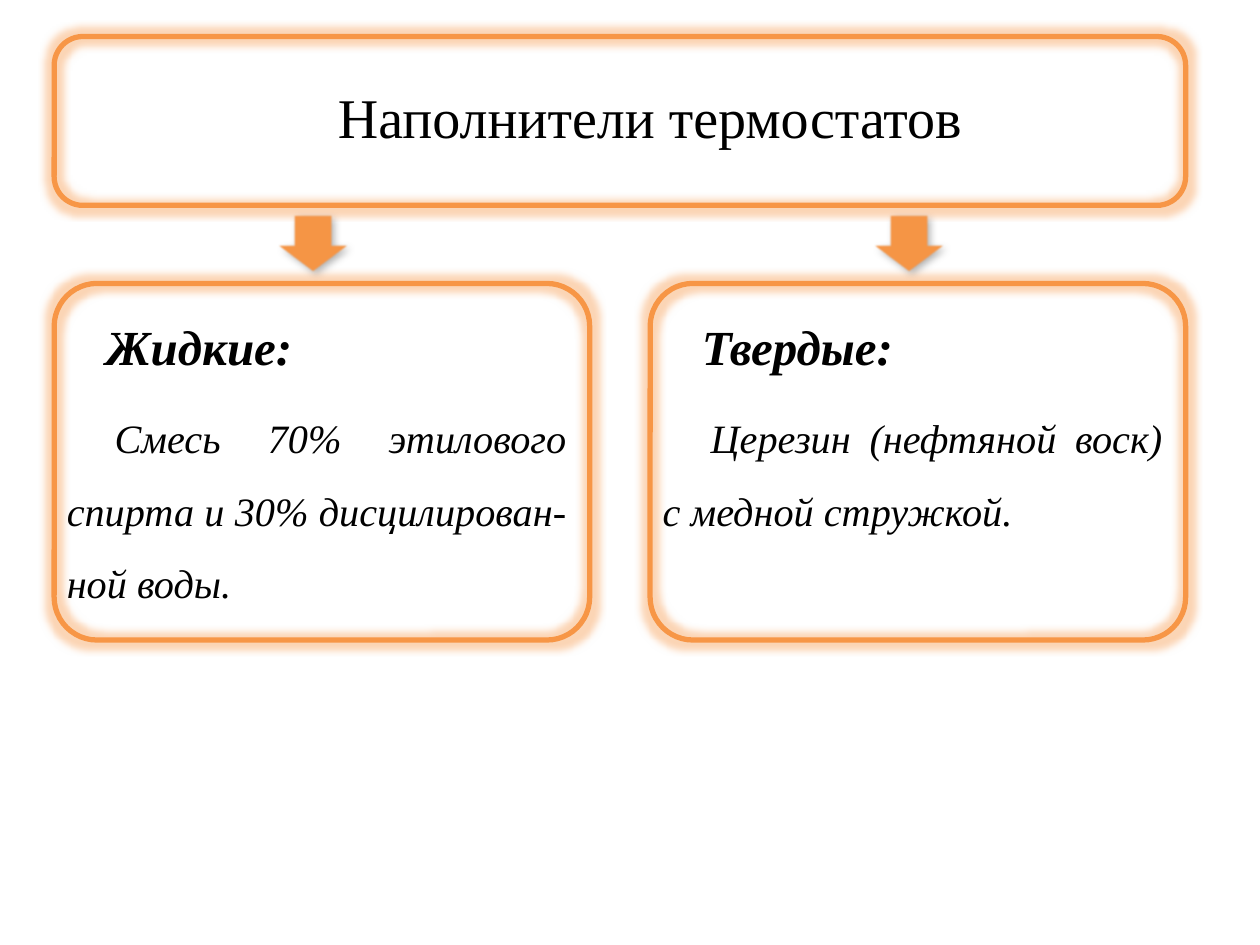
from lxml import etree
from pptx import Presentation
from pptx.dml.color import RGBColor
from pptx.enum.shapes import MSO_SHAPE
from pptx.enum.text import MSO_ANCHOR, MSO_AUTO_SIZE, PP_ALIGN
from pptx.oxml.ns import qn
from pptx.util import Inches, Pt

ROUND, ARROW = MSO_SHAPE.ROUNDED_RECTANGLE, MSO_SHAPE.DOWN_ARROW
MIDDLE, BOTTOM, TOP = MSO_ANCHOR.MIDDLE, MSO_ANCHOR.BOTTOM, MSO_ANCHOR.TOP
CENTER, LEFT, JUSTIFY = PP_ALIGN.CENTER, PP_ALIGN.LEFT, PP_ALIGN.JUSTIFY
FONT, BLACK, ORANGE = "Times New Roman", "000000", "F79646"

TITLE = "Наполнители термостатов"
FILLERS = [
    ("Жидкие:", "Смесь 70% этилового спирта и 30% дисцилирован-ной воды."),
    ("Твердые:", "Церезин (нефтяной воск) с медной стружкой."),
]
MARGIN, COLUMN_STEP, BOX_WIDTH = 0.43, 4.73, 4.25


def rgb(value):
    return RGBColor.from_string(value)


def place(sp, x, y, w, h):
    sp.left, sp.top, sp.width, sp.height = map(Inches, (x, y, w, h))


def write(sp, text, size, align, anchor, bold=False, italic=False,
          margin=0, indent=0, spacing=None):
    tf = sp.text_frame
    tf.word_wrap = True
    tf.auto_size = MSO_AUTO_SIZE.NONE
    tf.vertical_anchor = anchor
    p = tf.paragraphs[0]
    p.alignment = align
    p.line_spacing = spacing
    pPr = p._p.get_or_add_pPr()
    pPr.set("marL", str(Inches(margin)))
    pPr.set("indent", str(Inches(indent)))
    etree.SubElement(pPr, qn("a:buNone"))
    r = p.add_run()
    r.text = text
    r.font.name, r.font.size = FONT, Pt(size)
    r.font.bold, r.font.italic = bold, italic
    r.font.color.rgb = rgb(BLACK)


def add_effect(sp, kind, color, alpha, **attributes):
    sp.shadow.inherit = False
    effects = sp._element.spPr.find(qn("a:effectLst"))
    effect = etree.SubElement(effects, qn(f"a:{kind}"))
    for name, value in attributes.items():
        effect.set(name, str(value))
    clr = etree.SubElement(effect, qn("a:srgbClr"), val=color)
    etree.SubElement(clr, qn("a:alpha"), val=str(alpha * 1000))
    return effects


def add_frame(slide, x, y, w, h, radius):
    sp = slide.shapes.add_shape(ROUND, 0, 0, 0, 0)
    place(sp, x, y, w, h)
    sp.adjustments[0] = radius
    sp.fill.background()
    sp.line.color.rgb, sp.line.width = rgb(ORANGE), Pt(3)
    add_effect(sp, "glow", ORANGE, 40, rad=Pt(8))


def add_arrow(slide, x, y, w, h):
    sp = slide.shapes.add_shape(ARROW, 0, 0, 0, 0)
    place(sp, x, y, w, h)
    sp.fill.solid()
    sp.fill.fore_color.rgb = rgb(ORANGE)
    sp.line.fill.background()
    effects = add_effect(sp, "outerShdw", BLACK, 30, blurRad=Pt(4.5),
                         dist=Pt(2.6), dir=53 * 60000)
    etree.SubElement(effects, qn("a:softEdge"), rad=str(Pt(1)))


def main():
    prs = Presentation()
    prs.slide_width, prs.slide_height = Inches(10), Inches(7.5)
    slide = prs.slides.add_slide(prs.slide_layouts[4])
    title, *bodies = list(slide.placeholders)[:5]

    place(title, 0.66, 0.3, 9, 1.25)
    write(title, TITLE, 32, CENTER, MIDDLE)
    add_frame(slide, MARGIN, 0.29, COLUMN_STEP + BOX_WIDTH, 1.34, 0.17)

    for i, (name, details) in enumerate(FILLERS):
        x = MARGIN + i * COLUMN_STEP
        heading, body = bodies[2 * i:2 * i + 2]
        place(heading, x, 2.33, 4.42, 0.7)
        write(heading, name, 28, LEFT, BOTTOM, bold=True, italic=True, margin=0.31)
        place(body, x, 3.04, 4.17, 3.74)
        write(body, details, 23, JUSTIFY, TOP, italic=True, indent=0.38, spacing=1.5)
        add_frame(slide, x, 2.25, BOX_WIDTH, 2.83, 0.12)
        add_arrow(slide, x + 1.74, 1.7, 0.63, 0.47)

    prs.save("out.pptx")


if __name__ == "__main__":
    main()
